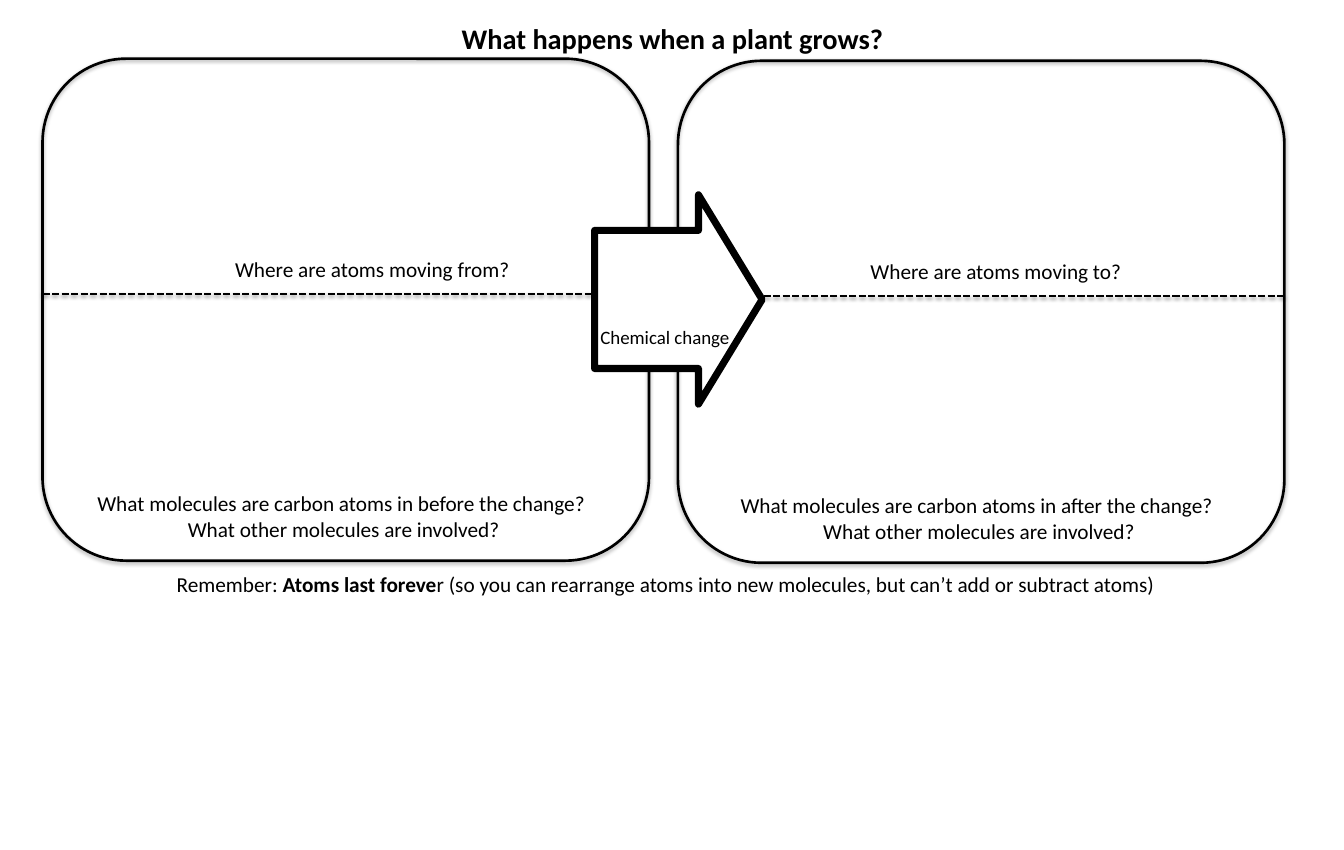
import lxml.etree
import pptx
import pptx.dml.color
import pptx.enum.dml
import pptx.enum.shapes
import pptx.enum.text
import pptx.oxml
import pptx.oxml.ns
import pptx.util

COLUMNS, ROWS = 158, 99.9
INK, PAPER = "000000", "FFFFFF"
MSO = pptx.enum.shapes.MSO_SHAPE
ALIGN = pptx.enum.text.PP_ALIGN
ANCHOR = pptx.enum.text.MSO_ANCHOR
FIT = pptx.enum.text.MSO_AUTO_SIZE


def rgb(value):
    return pptx.dml.color.RGBColor.from_string(value)


class Worksheet:
    """Draws styled elements on one slide, measured in grid columns and rows."""

    def __init__(self, prs):
        self.font = "Calibri"
        self.col = prs.slide_width / COLUMNS
        self.row = prs.slide_height / ROWS
        self.s = prs.slides.add_slide(prs.slide_layouts[5])
        self.s.background.fill.solid()
        self.s.background.fill.fore_color.rgb = rgb(PAPER)

    def box(self, x, y, w, h):
        return [round(v) for v in (x * self.col, y * self.row, w * self.col, h * self.row)]

    def set_text(self, sp, runs, size, align, inset=(0.1, 0.05), wrap=False, bold=False):
        tf = sp.text_frame
        tf.word_wrap = wrap
        tf.auto_size = FIT.NONE if wrap else FIT.SHAPE_TO_FIT_TEXT
        tf.margin_left = tf.margin_right = pptx.util.Inches(inset[0])
        tf.margin_top = tf.margin_bottom = pptx.util.Inches(inset[1])
        p = tf.paragraphs[0]
        p.alignment = align
        p.font.name, p.font.size, p.font.bold = self.font, pptx.util.Pt(size), bold
        p.font.color.rgb = rgb(INK)
        if isinstance(runs, str):
            p.text = runs
            return
        for text, strong in runs:
            r = p.add_run()
            r.text, r.font.bold = text, strong

    def title(self, text, *place):
        sp = self.s.shapes.title
        sp.left, sp.top, sp.width, sp.height = self.box(*place)
        self.set_text(sp, text, 24, ALIGN.CENTER, (0.15, 0.07), wrap=True, bold=True)
        sp.text_frame.vertical_anchor = ANCHOR.MIDDLE

    def text(self, runs, *place, size=18, align=ALIGN.LEFT, **style):
        sp = self.s.shapes.add_textbox(*self.box(*place))
        self.set_text(sp, runs, size, align, **style)

    def shadow(self, sp, distance=None, opacity=0):
        effects = lxml.etree.SubElement(sp._element.spPr, pptx.oxml.ns.qn("a:effectLst"))
        if distance:
            effects.append(pptx.oxml.parse_xml(
                f'<a:outerShdw {pptx.oxml.ns.nsdecls("a")} blurRad="{pptx.util.Pt(3.1)}" '
                f'dist="{pptx.util.Pt(distance)}" dir="5400000" rotWithShape="0">'
                f'<a:srgbClr val="{INK}"><a:alpha val="{opacity * 1000}"/></a:srgbClr>'
                '</a:outerShdw>'))

    def stroke(self, sp, width):
        sp.line.color.rgb = rgb(INK)
        sp.line.width = pptx.util.Pt(width)

    def frame(self, *place):
        sp = self.s.shapes.add_shape(MSO.ROUNDED_RECTANGLE, *self.box(*place))
        sp.fill.background()
        self.stroke(sp, 2.25)
        self.shadow(sp, 1.8, 35)

    def divider(self, x, y, w):
        left, top, width, _ = self.box(x, y, w, 0)
        sp = self.s.shapes.add_connector(
            pptx.enum.shapes.MSO_CONNECTOR.STRAIGHT, left, top, left + width, top)
        self.stroke(sp, 2)
        sp.line.dash_style = pptx.enum.dml.MSO_LINE.SQUARE_DOT
        self.shadow(sp, 1.6, 38)

    def arrow(self, *place):
        sp = self.s.shapes.add_shape(MSO.RIGHT_ARROW, *self.box(*place))
        sp.adjustments[0], sp.adjustments[1] = 0.66, 0.38
        sp.fill.solid()
        sp.fill.fore_color.rgb = rgb(PAPER)
        self.stroke(sp, 6)
        self.shadow(sp)

    def panel(self, x, y, moment, question_width, direction, label_width):
        self.frame(x, y, 71.3, 59)
        self.divider(x, y + 27.65, 71.3)
        self.text(f"What molecules are carbon atoms in {moment} the change? \v"
                  "What other molecules are involved?",
                  x + 35.4 - question_width / 2, y + 50.25, question_width, 7.1,
                  align=ALIGN.CENTER)
        self.text(f"Where are atoms moving {direction}?", x + 21.65, y + 22.75, label_width, 4)


def main():
    prs = pptx.Presentation()
    prs.slide_width, prs.slide_height = pptx.util.Inches(15.8), pptx.util.Inches(9.99)
    sheet = Worksheet(prs)
    sheet.title("What happens when a plant grows?", 11.9, 1.8, 134.3, 5.3)
    sheet.text([("Remember: ", False), ("Atoms last foreve", True),
                ("r (so you can rearrange atoms into new molecules, "
                 "but can’t add or subtract atoms)", False)],
               9.3, 66.4, 137.9, 5.9, align=ALIGN.CENTER, inset=(0.15, 0.07), wrap=True)
    sheet.panel(5, 6.9, "before", 60.2, "from", 34.8)
    sheet.panel(79.7, 7.15, "after", 58.3, "to", 31.9)
    sheet.arrow(69.9, 22.9, 19.7, 24.6)
    sheet.text("Chemical change", 69.6, 37.8, 17.4, 3.7, size=16)
    prs.save("out.pptx")


if __name__ == "__main__":
    main()
